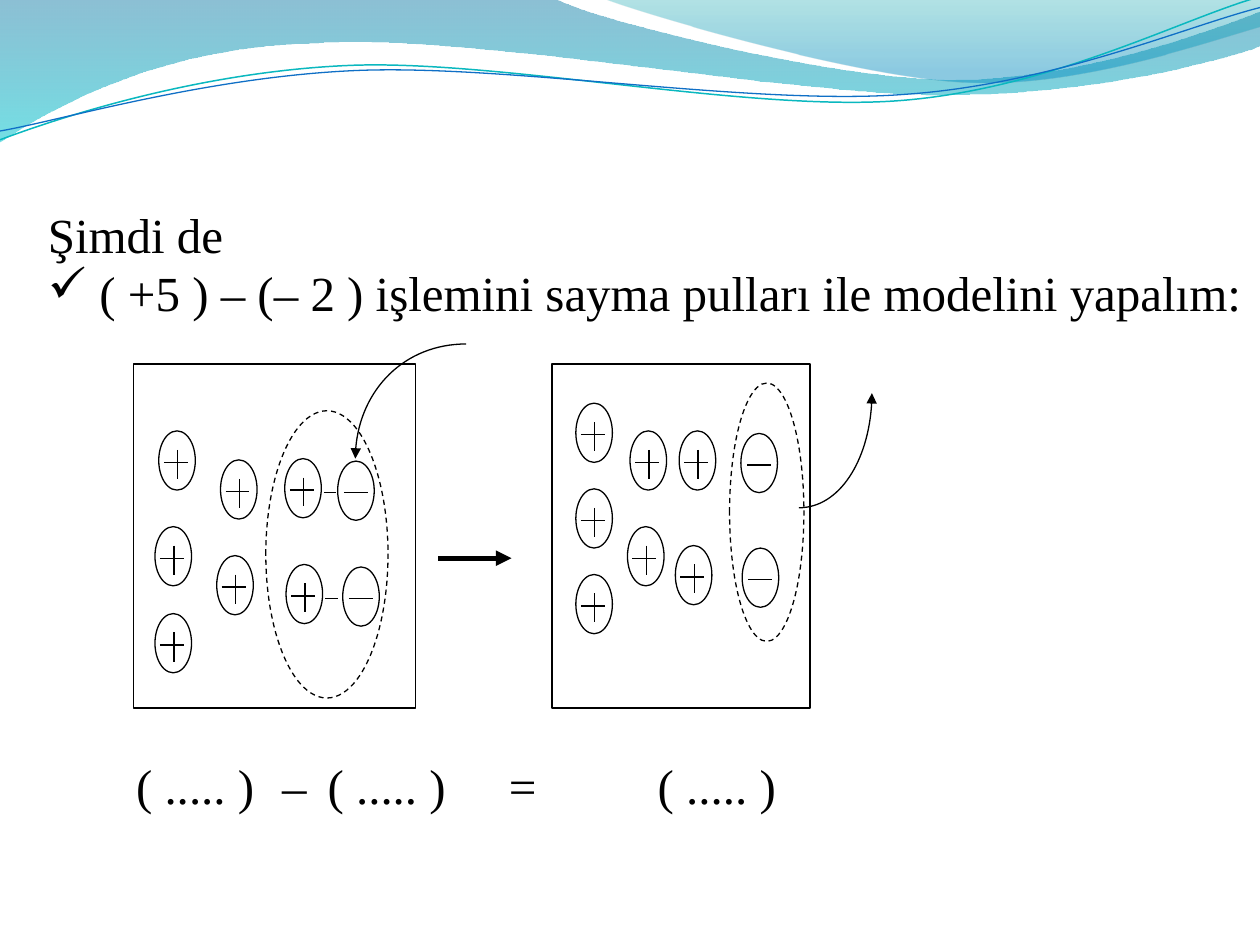
"""Build a slide that models (+5) - (-2) with counting chips."""
from dataclasses import dataclass

from lxml.etree import SubElement
from pptx import Presentation
from pptx.dml.color import RGBColor as RGB
from pptx.enum.dml import MSO_LINE as DASH
from pptx.enum.shapes import MSO_CONNECTOR as CONN, MSO_SHAPE as SHAPE
from pptx.enum.text import MSO_ANCHOR as ANCHOR
from pptx.oxml.ns import qn
from pptx.util import Inches, Pt


@dataclass(frozen=True)
class Theme:
    """Colours, type and line sizes of the slide."""
    ink: str = "000000"
    teal: str = "0AB8BF"
    blue: str = "0F6FC6"
    band: tuple = ((0, "0074A1", 45), (1, "00C6CF", 55))
    crest: tuple = ((0, "00A1A9", 30), (0.8, "008BBF", 45))
    font: str = "Times New Roman"
    size: int = 28
    thin: float = 0.75
    thick: float = 3


T = Theme()
CHIP_W, CHIP_H = 0.29, 0.47

BAND = [("L", (4.4, -0.01)), ("C", (4.76, 0.17), (6.64, 0.63), (7.58, 0.63)),
        ("C", (8.53, 0.63), (9.58, 0.26), (10, 0.09)), ("L", (10.01, 0.36)),
        ("C", (9.83, 0.44), (8.7, 0.76), (7.46, 0.75)),
        ("C", (6.22, 0.75), (3.82, 0.28), (2.57, 0.34)),
        ("C", (1.29, 0.36), (0.46, 0.83), (-0.01, 1.13))]
CREST = [("C", (5.09, 0.11), (6.82, 0.62), (7.69, 0.65)),
         ("C", (8.56, 0.69), (9.61, 0.32), (10, 0.21)), ("L", (10, 0))]
TEAL_WAVE = [("C", (0.48, 0.93), (1.58, 0.57), (2.77, 0.52)),
             ("C", (3.95, 0.47), (5.93, 0.89), (7.13, 0.8)),
             ("C", (8.33, 0.71), (9.38, 0.15), (9.98, -0.02))]
BLUE_WAVE = [("C", (0.47, 0.96), (1.64, 0.61), (2.83, 0.56)),
             ("C", (4.03, 0.51), (5.97, 0.84), (7.17, 0.75)),
             ("C", (8.36, 0.67), (9.41, 0.21), (10, 0.06))]

LEFT_PLUS = [(1.23, 4.18), (1.26, 3.42), (1.23, 4.87), (1.75, 3.65), (1.72, 4.41)]
RIGHT_PLUS = [(4.57, 3.2), (4.57, 3.88), (4.57, 4.56), (5, 3.42), (4.98, 4.18),
              (5.39, 3.42), (5.36, 4.33)]
RIGHT_MINUS = [(5.88, 3.44), (5.89, 4.35)]
ZERO_PAIRS = [((2.26, 3.64), (2.68, 3.66)), ((2.27, 4.48), (2.72, 4.5))]


def set_line(line, color=T.ink, width=T.thin, arrow=False):
    """Colour a line and optionally give its end an arrowhead."""
    line.color.rgb = RGB.from_string(color)
    line.width = Pt(width)
    if arrow:
        SubElement(line._get_or_add_ln(), qn("a:tailEnd"), type="triangle")


def add_outline(shapes, kind, x, y, w, h, dashed=False):
    """Add an unfilled preset shape."""
    s = shapes.add_shape(kind, Inches(x), Inches(y), Inches(w), Inches(h))
    s.shadow.inherit = False
    s.fill.background()
    set_line(s.line)
    if dashed:
        s.line.dash_style = DASH.DASH


def add_line(shapes, x1, y1, x2, y2, width=T.thin, arrow=False):
    """Add a straight connector."""
    c = shapes.add_connector(CONN.STRAIGHT, Inches(x1), Inches(y1), Inches(x2), Inches(y2))
    set_line(c.line, width=width, arrow=arrow)
    SubElement(c._element.spPr, qn("a:effectLst"))


def add_curve(shapes, start, segments, closed=False):
    """Add a freeform made of straight (L) and cubic Bezier (C) segments."""
    builder = shapes.build_freeform(Inches(start[0]), Inches(start[1]))
    points = [p for _, *pts in segments for p in pts]
    builder.add_line_segments([(Inches(x), Inches(y)) for x, y in points], close=closed)
    s = builder.convert_to_shape()
    s.shadow.inherit = False
    lines = iter(list(s._element.iter(qn("a:lnTo"))))
    for kind, *pts in segments:
        steps = [next(lines) for _ in pts]
        if kind == "C":
            steps[0].tag = qn("a:cubicBezTo")
            for step in steps[1:]:
                steps[0].append(step[0])
                step.getparent().remove(step)
    return s


def add_wave_fill(shapes, start, segments, stops):
    """Add a closed wave with a translucent downward gradient."""
    s = add_curve(shapes, start, segments, closed=True)
    s.line.fill.background()
    s.fill.gradient()
    s.fill.gradient_angle = 270
    for stop, (position, color, opacity) in zip(s.fill.gradient_stops, stops):
        stop.position = position
        stop.color.rgb = RGB.from_string(color)
    colors = s._element.spPr.iter(qn("a:srgbClr"))
    for clr, (_, _, opacity) in zip(list(colors), stops):
        SubElement(clr, qn("a:alpha"), val=str(opacity * 1000))


def add_wave_line(shapes, start, segments, color=T.ink, width=T.thin, arrow=False):
    """Add an open curved line."""
    s = add_curve(shapes, start, segments)
    s.fill.background()
    set_line(s.line, color, width, arrow)


def add_chip(shapes, x, y, positive):
    """Add a counting chip marked plus or minus."""
    add_outline(shapes, SHAPE.OVAL, x, y, CHIP_W, CHIP_H)
    left = x + (0.04 if positive else 0.05)
    add_line(shapes, left, y + 0.25, left + 0.19, y + 0.25)
    if positive:
        add_line(shapes, x + 0.15, y + 0.15, x + 0.15, y + 0.38)


def add_chips(shapes, places, positive):
    """Add one grouped chip at each place."""
    for x, y in places:
        add_chip(shapes.add_group_shape().shapes, x, y, positive)


def add_zero_pairs(shapes):
    """Add the linked plus and minus chips as one group."""
    group = shapes.add_group_shape().shapes
    for plus, minus in ZERO_PAIRS:
        add_chip(group, *plus, True)
        add_chip(group, *minus, False)
        y = minus[1] + 0.25
        add_line(group, plus[0] + 0.31, y, plus[0] + 0.41, y)


def add_text(shapes, x, y, w, h, lines):
    """Add a text box without insets and return its paragraphs."""
    tf = shapes.add_textbox(Inches(x), Inches(y), Inches(w), Inches(h)).text_frame
    tf.margin_left = tf.margin_right = tf.margin_top = tf.margin_bottom = 0
    tf.vertical_anchor = ANCHOR.TOP
    tf.word_wrap = False
    tf.text = "\n".join(lines)
    for p in tf.paragraphs:
        p.font.name, p.font.size = T.font, Pt(T.size)
        p.font.color.rgb = RGB.from_string(T.ink)
    return tf.paragraphs


def set_bullet(p, char, indent):
    """Give a paragraph a hanging bullet."""
    pPr = p._p.get_or_add_pPr()
    pPr.set("marL", str(Inches(indent)))
    pPr.set("indent", str(-Inches(indent)))
    pPr.insert(0, pPr.makeelement(qn("a:buChar"), {"char": char}))


def set_tabs(p, stops):
    """Give a paragraph left tab stops."""
    pPr = p._p.get_or_add_pPr()
    tabs = pPr.makeelement(qn("a:tabLst"), {})
    pPr.insert(0, tabs)
    for stop in stops:
        SubElement(tabs, qn("a:tab"), pos=str(Inches(stop)), algn="l")


def main():
    """Build and save the slide."""
    prs = Presentation()
    prs.slide_width, prs.slide_height = Inches(10), Inches(7.5)
    shapes = prs.slides.add_slide(prs.slide_layouts[6]).shapes

    add_wave_fill(shapes, (0, 0), BAND, T.band)
    add_wave_fill(shapes, (4.79, -0.01), CREST, T.crest)
    add_wave_line(shapes, (0, 1.11), TEAL_WAVE, T.teal, 0.85)
    add_wave_line(shapes, (0, 1.04), BLUE_WAVE, T.blue)

    add_outline(shapes, SHAPE.RECTANGLE, 1.06, 2.89, 2.24, 2.73)
    add_chips(shapes, LEFT_PLUS, True)
    add_outline(shapes, SHAPE.OVAL, 2.11, 3.26, 0.97, 2.28, dashed=True)
    add_wave_line(shapes, (3.7, 2.73), [("C", (3.21, 2.73), (2.82, 3.13), (2.82, 3.64))], arrow=True)
    add_line(shapes, 3.48, 4.43, 4.06, 4.43, T.thick, arrow=True)

    add_outline(shapes, SHAPE.RECTANGLE, 4.38, 2.89, 2.05, 2.73)
    add_chips(shapes, RIGHT_PLUS, True)
    add_chips(shapes, RIGHT_MINUS, False)
    add_outline(shapes, SHAPE.OVAL, 5.79, 3.04, 0.59, 2.05, dashed=True)
    add_wave_line(shapes, (6.34, 4.03), [("C", (6.66, 4.03), (6.92, 3.62), (6.92, 3.12))], arrow=True)
    add_zero_pairs(shapes)

    answer, = add_text(shapes, 1.08, 6, 6.03, 0.47, ["( ..... )\t–\t( ..... )\t=\t( ..... )"])
    set_tabs(answer, [1.16, 1.52, 2.96, 4.14])
    _, task = add_text(shapes, 0.38, 1.62, 9.56, 0.92, [
        "Şimdi de", "( +5 ) – (– 2 ) işlemini sayma pulları ile modelini yapalım:"])
    set_bullet(task, "✓", 0.41)
    prs.save("out.pptx")


if __name__ == "__main__":
    main()
